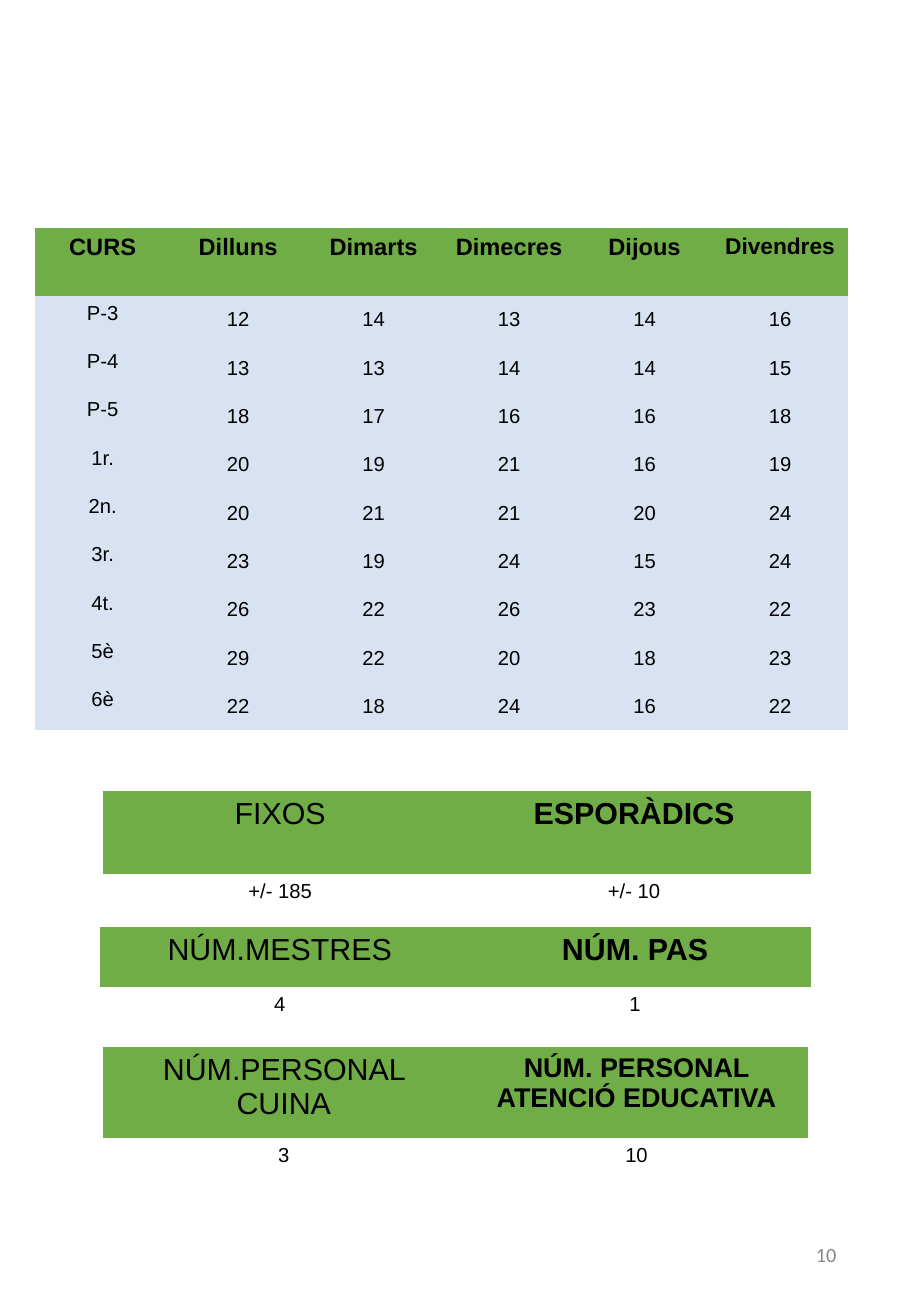
from pptx import Presentation
from pptx.dml.color import RGBColor
from pptx.enum.text import MSO_ANCHOR, PP_ALIGN
from pptx.util import Cm, Pt

COLORS = {"head": "70AD47", "body": "D8E2F3", "text": "000000", "page": "888888"}
PLAIN = "{2D5ABB26-0587-4C30-8999-92F81FD0307C}"  # table style with no grid
SIDE = 8.33  # nominal side of every table frame


def write(frame, text, size, bold=False, name="Arial", color="text",
          align=PP_ALIGN.CENTER):
    par = frame.paragraphs[0]
    par.alignment = align
    run = par.add_run()
    run.text = text
    look = {"size": Pt(size), "bold": bold, "name": name}
    for key, value in look.items():
        setattr(run.font, key, value)
    run.font.color.rgb = RGBColor.from_string(COLORS[color])


def add_grid(slide, left, top, widths, heights):
    """Add an empty table without style, sized in centimetres."""
    frame = slide.shapes.add_table(
        len(heights), len(widths), Cm(left), Cm(top), Cm(SIDE), Cm(SIDE))
    for node in frame.element.iter("{*}tableStyleId"):
        node.text = PLAIN
    table = frame.table
    table.first_row = table.horz_banding = False
    for col, width in zip(table.columns, widths):
        col.width = Cm(width)
    for row, height in zip(table.rows, heights):
        row.height = Cm(height)
    frame.width = frame.height = Cm(SIDE)
    return table


deck = Presentation()
deck.slide_width, deck.slide_height = Cm(19.05), Cm(27.51)
slide = deck.slides.add_slide(deck.slide_layouts[6])

# Page number
page = slide.shapes.add_textbox(Cm(13.45), Cm(25.49), Cm(4.29), Cm(1.47))
page.text_frame.word_wrap = True
page.text_frame.vertical_anchor = MSO_ANCHOR.MIDDLE
write(page.text_frame, "10", 12, name="Calibri", color="page", align=PP_ALIGN.RIGHT)

# Diners per class and weekday
DAYS = ["CURS", "Dilluns", "Dimarts", "Dimecres", "Dijous", "Divendres"]
DINERS = [
    ("P-3", 12, 14, 13, 14, 16),
    ("P-4", 13, 13, 14, 14, 15),
    ("P-5", 18, 17, 16, 16, 18),
    ("1r.", 20, 19, 21, 16, 19),
    ("2n.", 20, 21, 21, 20, 24),
    ("3r.", 23, 19, 24, 15, 24),
    ("4t.", 26, 22, 26, 23, 22),
    ("5è", 29, 22, 20, 18, 23),
    ("6è", 22, 18, 24, 16, 22),
]
week = add_grid(slide, 0.73, 4.76, [17 / len(DAYS)] * len(DAYS),
                [1.42] + [1.01] * len(DINERS))
for r, row in enumerate([DAYS] + DINERS):
    for c, value in enumerate(row):
        cell = week.cell(r, c)
        cell.fill.solid()
        cell.fill.fore_color.rgb = RGBColor.from_string(COLORS["body" if r else "head"])
        if r and c:
            cell.vertical_anchor = MSO_ANCHOR.MIDDLE
        size = 12 if r else 13.5 if value == "Divendres" else 14
        write(cell.text_frame, str(value), size, bold=r == 0)

# Totals: left, top, widths, heights, then (title, title size, value) per column
TOTALS = [
    (2.16, 16.54, [7.4, 7.4], [1.74, 1.09],
     [("FIXOS", 18, "+/- 185"), ("ESPORÀDICS", 18, "+/- 10")]),
    (2.1, 19.38, [7.5, 7.36], [1.26, 1.24],
     [("NÚM.MESTRES", 18, "4"), ("NÚM. PAS", 18, "1")]),
    (2.15, 21.89, [7.57, 7.18], [1.9, 0.94],
     [("NÚM.PERSONAL CUINA", 18, "3"),
      ("NÚM. PERSONAL ATENCIÓ EDUCATIVA", 16, "10")]),
]
for left, top, widths, heights, items in TOTALS:
    total = add_grid(slide, left, top, widths, heights)
    for c, (title, size, value) in enumerate(items):
        head, body = total.cell(0, c), total.cell(1, c)
        head.fill.solid()
        head.fill.fore_color.rgb = RGBColor.from_string(COLORS["head"])
        body.fill.background()
        write(head.text_frame, title, size, bold=c == 1)
        write(body.text_frame, value, 12)

deck.save("out.pptx")
